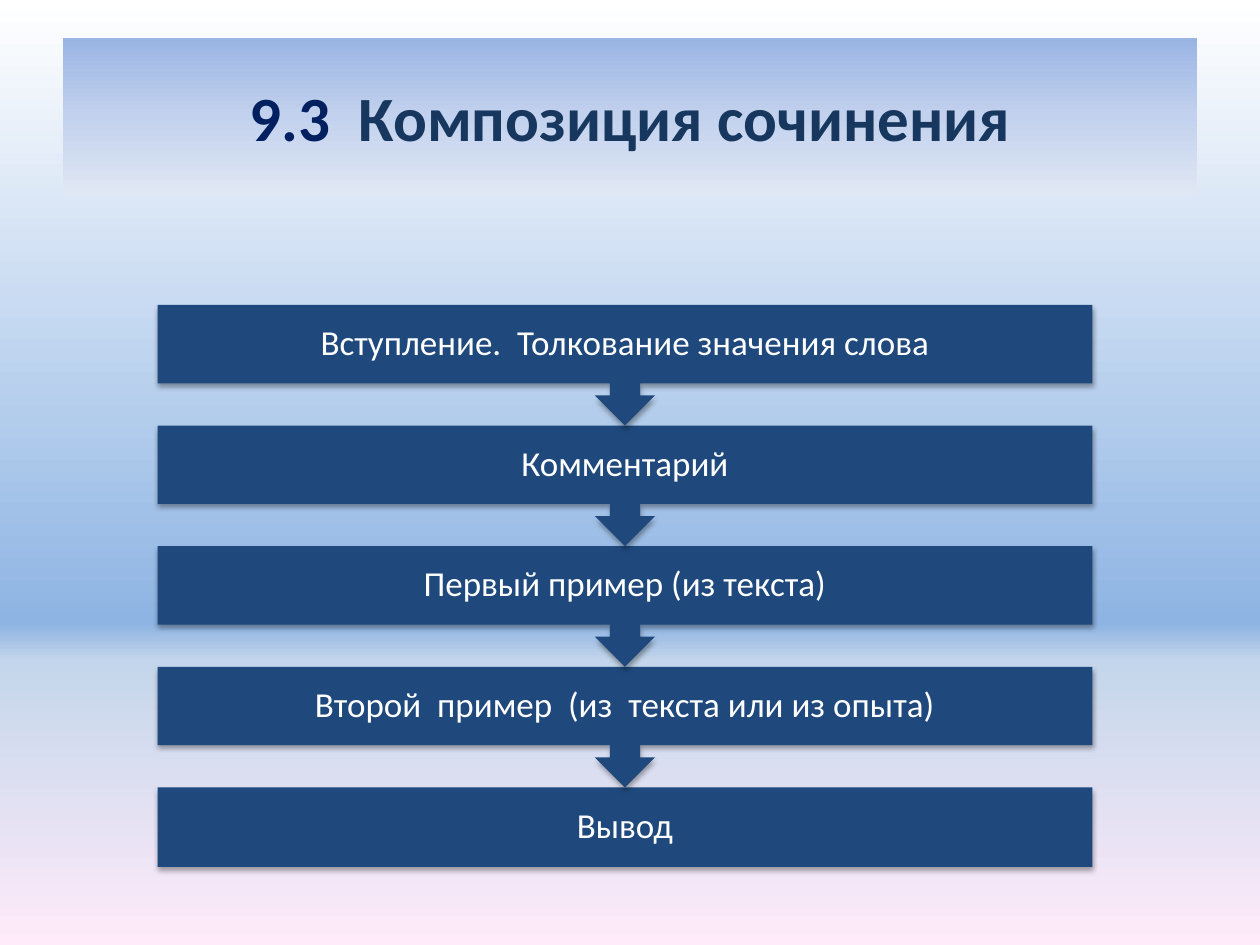
from dataclasses import dataclass

from lxml.etree import SubElement
from pptx import Presentation
from pptx.dml.color import RGBColor
from pptx.enum.shapes import MSO_SHAPE as Shape
from pptx.enum.text import MSO_ANCHOR as Anchor, PP_ALIGN as Align
from pptx.oxml.ns import qn
from pptx.util import Inches, Pt


@dataclass(frozen=True)
class Theme:
    font: str = "Calibri"
    title_size: int = 36
    step_size: int = 20
    number: str = "002060"
    title: str = "17375E"
    step: str = "1F497D"
    step_text: str = "FFFFFF"
    shadow: str = "000000"
    background: tuple = ((0, "FFFFFF"), (66, "8EB4E3"), (70, "C4D6EB"), (100, "FFEBFA"))
    banner: tuple = ((0, "9AB5E4"), (50, "C2D1ED"), (100, "E1E8F5"))


THEME = Theme()
STEPS = [
    "Вступление.  Толкование значения слова",
    "Комментарий",
    "Первый пример (из текста)",
    "Второй  пример  (из  текста или из опыта)",
    "Вывод",
]


def rgb(color):
    return RGBColor.from_string(color)


def set_gradient(fill, element, stops):
    """Fill from top to bottom through any number of colour stops."""
    fill.gradient()
    fill.gradient_angle = 270
    stop_list = next(element.iter(qn("a:gsLst")))
    for stop in list(stop_list):
        stop_list.remove(stop)
    for position, color in stops:
        stop = SubElement(stop_list, qn("a:gs"), pos=str(position * 1000))
        SubElement(stop, qn("a:srgbClr"), val=color)


def add_soft_shadow(shape):
    shape.shadow.inherit = False
    effects = shape.element.spPr.find(qn("a:effectLst"))
    shadow = SubElement(effects, qn("a:outerShdw"), blurRad=str(Pt(3.1)),
                        dist=str(Pt(1.8)), dir="5400000", rotWithShape="0")
    color = SubElement(shadow, qn("a:srgbClr"), val=THEME.shadow)
    SubElement(color, qn("a:alpha"), val="35000")


def add_title(slide, left, top, width, height):
    banner = slide.shapes.add_shape(Shape.RECTANGLE, left, top, width, height)
    banner.shadow.inherit = False
    banner.line.fill.background()
    set_gradient(banner.fill, banner.element, THEME.banner)
    banner.text_frame.vertical_anchor = Anchor.MIDDLE
    paragraph = banner.text_frame.paragraphs[0]
    paragraph.alignment = Align.CENTER
    paragraph.font.name = THEME.font
    paragraph.font.size = Pt(THEME.title_size)
    paragraph.font.bold = True
    for text, color in (("9.3  ", THEME.number), ("Композиция сочинения", THEME.title)):
        run = paragraph.add_run()
        run.text = text
        run.font.color.rgb = rgb(color)


def add_step(slide, kind, text, left, top, width, height):
    step = slide.shapes.add_shape(kind, left, top, width, height)
    step.fill.solid()
    step.fill.fore_color.rgb = rgb(THEME.step)
    step.line.fill.background()
    add_soft_shadow(step)
    frame = step.text_frame
    frame.word_wrap = True
    frame.vertical_anchor = Anchor.MIDDLE
    frame.margin_left = frame.margin_right = Inches(0.16)
    frame.margin_top = frame.margin_bottom = Inches(0.16)
    paragraph = frame.paragraphs[0]
    paragraph.text = text
    paragraph.alignment = Align.CENTER
    paragraph.line_spacing = 0.9
    paragraph.font.name = THEME.font
    paragraph.font.size = Pt(THEME.step_size)
    paragraph.font.color.rgb = rgb(THEME.step_text)


def add_flow(slide, left, top, width, height):
    """Stack the steps; every one but the last points down to the next."""
    last = len(STEPS) - 1
    box_height = Inches(0.63)
    pitch = (height - box_height) // last
    # Bottom step first, so that each arrow tip lies over the step below
    for index in range(last, -1, -1):
        kind = Shape.RECTANGLE if index == last else Shape.DOWN_ARROW_CALLOUT
        step_height = box_height if index == last else pitch
        add_step(slide, kind, STEPS[index], left, top + index * pitch, width, step_height)


def main():
    presentation = Presentation()
    presentation.slide_width = Inches(10)
    presentation.slide_height = Inches(7.5)
    slide = presentation.slides.add_slide(presentation.slide_layouts[6])

    # Background
    set_gradient(slide.background.fill, slide.element, THEME.background)
    # Title banner
    add_title(slide, Inches(0.5), Inches(0.3), Inches(9), Inches(1.25))
    # Essay structure
    add_flow(slide, Inches(1.25), Inches(2.42), Inches(7.42), Inches(4.46))

    presentation.save("out.pptx")


if __name__ == "__main__":
    main()
